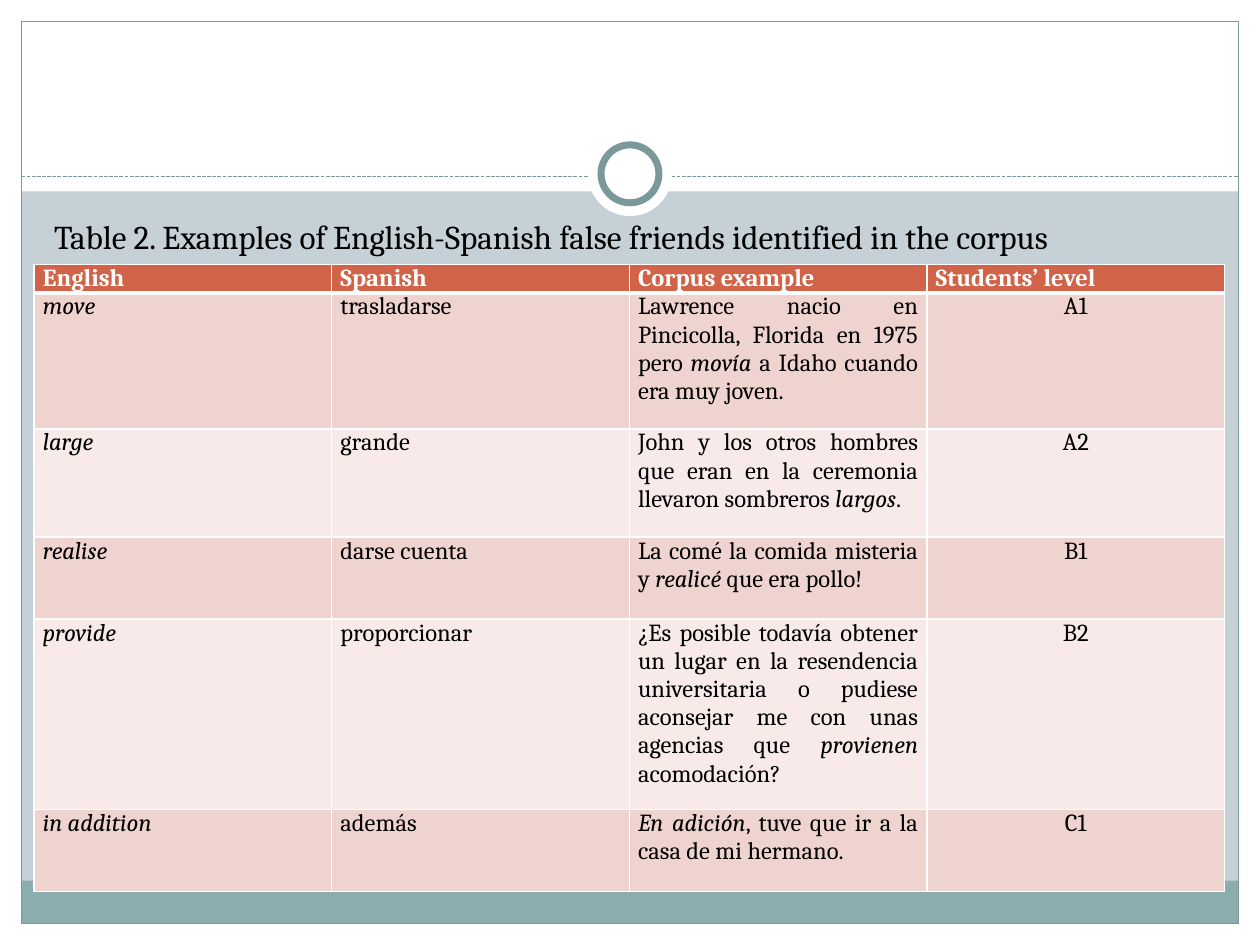
import pptx
import pptx.util
import pptx.dml.color
import pptx.enum.dml
import pptx.enum.shapes
import pptx.enum.text
from lxml import etree
from pptx.oxml.ns import qn

# Content: words between asterisks are italic
TITLE = "Table 2. Examples of English-Spanish false friends identified in the corpus"
ROWS = [
    ("English", "Spanish", "Corpus example", "Students’ level"),
    ("*move*", "trasladarse", "Lawrence nacio en Pincicolla, Florida en 1975 pero "
     "*movía* a Idaho cuando era muy joven.", "A1"),
    ("*large*", "grande", "John y los otros hombres que eran en la ceremonia "
     "llevaron sombreros *largos*.", "A2"),
    ("*realise*", "darse cuenta",
     "La comé la comida misteria y *realicé* que era pollo!", "B1"),
    ("*provide*", "proporcionar", "¿Es posible todavía obtener un lugar en la "
     "resendencia universitaria o pudiese aconsejar me con unas agencias que "
     "*provienen* acomodación?", "B2"),
    ("*in addition*", "además",
     "*En adición*, tuve que ir a la casa de mi hermano.", "C1"),
]
HEIGHTS = [0.22, 1.08, 0.86, 0.65, 1.51, 0.65]
COLORS = {"back": "C5D1D7", "white": "FFFFFF", "band": "8CADAE", "line": "7C999A",
          "text": "000000", "head": "D16349", "odd": "EED3CF", "even": "F7EAE9"}
FONT = "Cambria"
WIDE, HIGH, EDGE = 10, 7.5, 0.17

Inches, Pt = pptx.util.Inches, pptx.util.Pt
Kind = pptx.enum.shapes.MSO_SHAPE
Align = pptx.enum.text.PP_ALIGN


def color(name):
    return pptx.dml.color.RGBColor.from_string(COLORS[name])


def style(run, size, name):
    run.font.name, run.font.size = FONT, Pt(size)
    run.font.color.rgb = color(name)


def draw(kind, box, fill=None, width=0):
    shape = slide.shapes.add_shape(kind, *map(Inches, box))
    shape.shadow.inherit = False
    if fill:
        shape.fill.solid()
        shape.fill.fore_color.rgb = color(fill)
    else:
        shape.fill.background()
    if width:
        shape.line.color.rgb = color("line")
        shape.line.width = Pt(width)
    else:
        shape.line.fill.background()


def border(cell, side, width):
    props = cell._tc.get_or_add_tcPr()
    line = etree.SubElement(props, qn("a:ln" + side), w=str(Pt(width)))
    fill = etree.SubElement(line, qn("a:solidFill"))
    etree.SubElement(fill, qn("a:srgbClr"), val=COLORS["white"])


def fill_cell(cell, text, row, col):
    head = row == 0
    for side in "LRTB":
        thick = (head and side == "B") or (row == 1 and side == "T")
        border(cell, side, 3 if thick else 1)
    cell.fill.solid()
    cell.fill.fore_color.rgb = color("head" if head else "odd" if row % 2 else "even")
    cell.margin_left = cell.margin_right = Inches(0.07)
    cell.margin_top = cell.margin_bottom = 0
    para = cell.text_frame.paragraphs[0]
    para.alignment = Align.CENTER if col == 3 and not head else Align.JUSTIFY
    for n, part in enumerate(text.split("*")):
        if part:
            run = para.add_run()
            run.text = part
            style(run, 14, "white" if head else "text")
            run.font.bold, run.font.italic = head, n % 2 == 1


# Slide
deck = pptx.Presentation()
deck.slide_width, deck.slide_height = Inches(WIDE), Inches(HIGH)
slide = deck.slides.add_slide(deck.slide_layouts[1])
slide.background.fill.solid()
slide.background.fill.fore_color.rgb = color("back")
top = slide.shapes.title._element
top.getparent().remove(top)

# White frame, bottom band and outline
for box in [(0, HIGH - EDGE, WIDE, EDGE), (0, 0, WIDE, 1.52),
            (0, 0, EDGE, HIGH), (WIDE - EDGE, 0, EDGE, HIGH)]:
    draw(Kind.RECTANGLE, box, "white")
inner = WIDE - 2 * EDGE
draw(Kind.RECTANGLE, (EDGE, 6.99, inner, 0.34), "band")
draw(Kind.RECTANGLE, (EDGE, EDGE, inner, HIGH - 2 * EDGE), width=0.75)

# Dashed rule with the ring at its middle
rule = slide.shapes.add_connector(
    pptx.enum.shapes.MSO_CONNECTOR.STRAIGHT,
    *map(Inches, (EDGE, 1.4, WIDE - EDGE, 1.4)))
rule.line.color.rgb = color("line")
rule.line.width = Pt(0.75)
rule.line.dash_style = pptx.enum.dml.MSO_LINE.SQUARE_DOT
etree.SubElement(rule._element.spPr, qn("a:effectLst"))
for size, width in [(0.67, 0), (0.46, 4)]:
    draw(Kind.OVAL, ((WIDE - size) / 2, 1.38 - size / 2, size, size), "white", width)

# Caption in the body placeholder, brought in front of the frame
body = slide.placeholders[1]
body.left, body.top, body.width, body.height = map(Inches, (0.33, 1.67, 9.3, 5))
slide.shapes._spTree.append(body._element)
body.text_frame.text = TITLE
body.text_frame.vertical_anchor = pptx.enum.text.MSO_ANCHOR.TOP
para = body.text_frame.paragraphs[0]
para.space_before = Pt(4)
props = para._p.get_or_add_pPr()
props.set("marL", str(Inches(0.3)))
props.set("indent", str(Inches(-0.3)))
etree.SubElement(props, qn("a:buNone"))
style(para.runs[0], 19, "text")

# Table
cols = len(ROWS[0])
table = slide.shapes.add_table(len(ROWS), cols, *map(
    Inches, (0.27, 2.1, 9.45, sum(HEIGHTS)))).table
for r, (texts, height) in enumerate(zip(ROWS, HEIGHTS)):
    table.rows[r].height = Inches(height)
    for c, text in enumerate(texts):
        fill_cell(table.cell(r, c), text, r, c)

deck.save("out.pptx")
